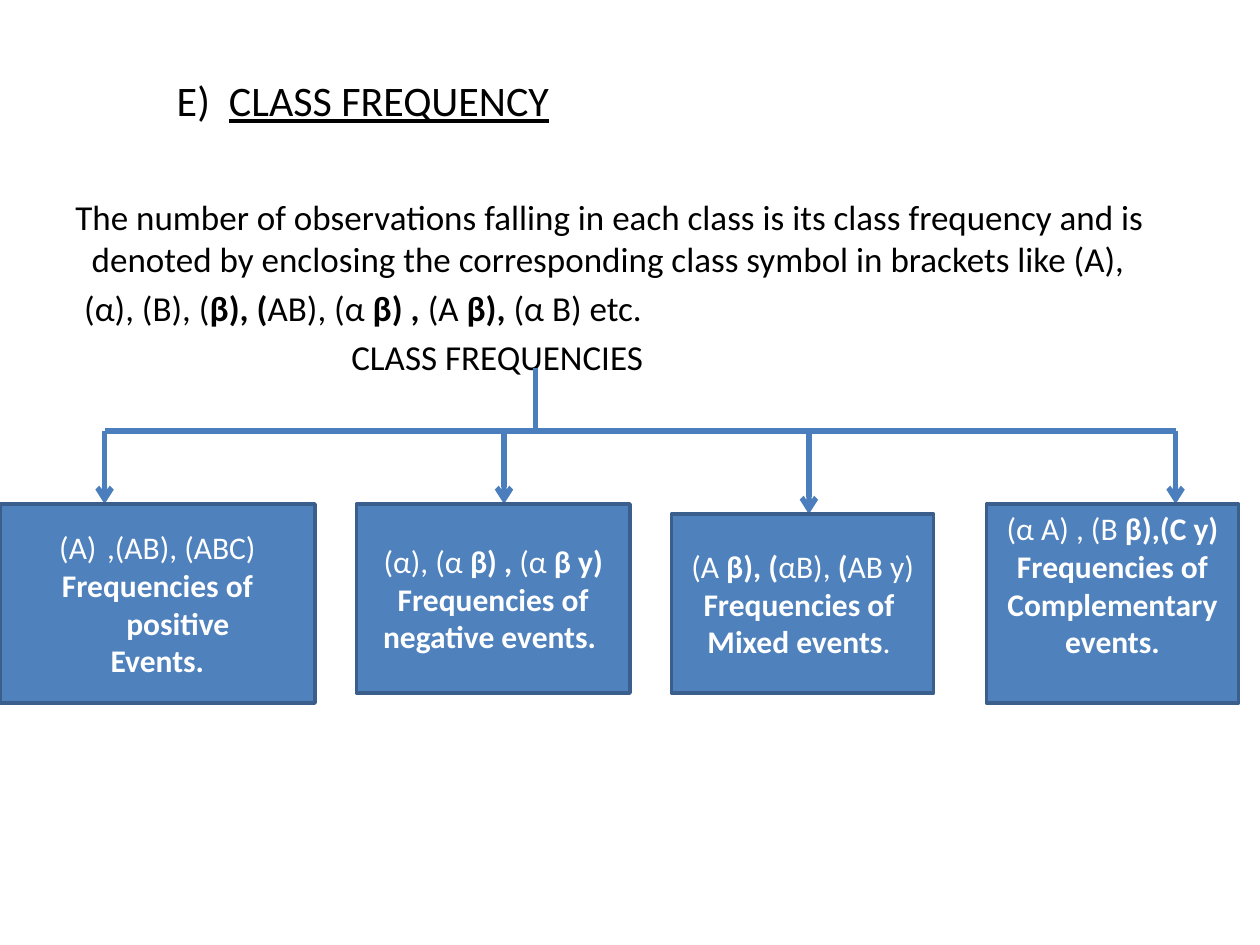
from lxml.etree import SubElement
from pptx import Presentation
from pptx.dml.color import RGBColor
from pptx.enum.shapes import MSO_CONNECTOR, MSO_SHAPE
from pptx.enum.text import MSO_ANCHOR, PP_ALIGN
from pptx.oxml.ns import qn
from pptx.util import Inches, Pt

# Content: asterisks switch bold on and off
TITLE = [("E)  ", False), ("CLASS FREQUENCY", True)]  # text, underlined
BODY = [  # text, left margin, first-line indent
    ("The number of observations falling in each class is its class frequency and is "
     "denoted by enclosing the corresponding class symbol in brackets like (A),", 0.38, -0.13),
    ("(α), (B), (*β), (*AB), (α* β) , *(A* β), *(α B) etc.", 0.32, 0),
    ("CLASS FREQUENCIES", 2.44, 0),
]
CLASSES = [
    {"box": (0, 4, 2.5, 1.58), "arrow": 0.83, "hanging": 0.38, "numbered": True,
     "lines": [",(AB), (ABC)", "*Frequencies of positive ", "*Events."]},
    {"box": (2.83, 4, 2.17, 1.5), "arrow": 4,
     "lines": [" (α), (α* β) ,* (α* β y) ", "*Frequencies of negative events. "]},
    {"box": (5.33, 4.08, 2.08, 1.42), "arrow": 6.42,
     "lines": ["(A* β), (*αB),* (*AB y)", "*Frequencies of ", "*Mixed events*. "]},
    {"box": (7.83, 4, 2, 1.58), "arrow": 9.33, "bottom": 0.35,
     "lines": ["(α A) , (B *β),(C y)", "*Frequencies of", "*Complementary events."]},
]
COLORS = {"text": "000000", "box": "4F81BD", "edge": "3A5F8C",
          "line": "4B7EBC", "box text": "FFFFFF"}
FONT = "Calibri"
STEM_X, STEM_TOP, BAR_Y = 4.25, 2.92, 3.42


def color(name):
    return RGBColor.from_string(COLORS[name])


def add_run(paragraph, text, size, ink, **style):
    run = paragraph.add_run()
    run.text = text
    run.font.color.rgb = color(ink)
    for name, value in {"name": FONT, "size": Pt(size), **style}.items():
        setattr(run.font, name, value)


def add_marked(paragraph, marked, size, ink):
    for i, part in enumerate(marked.split("*")):
        if part:
            add_run(paragraph, part, size, ink, bold=i % 2 == 1)


def indent(paragraph, left, first):
    properties = paragraph._p.get_or_add_pPr()
    properties.set("marL", str(Inches(left)))
    properties.set("indent", str(Inches(first)))
    return properties


def paragraphs(frame, count):
    return [frame.paragraphs[0]] + [frame.add_paragraph() for _ in range(count - 1)]


def add_line(slide, x1, y1, x2, y2, arrow=False):
    line = slide.shapes.add_connector(
        MSO_CONNECTOR.STRAIGHT, *map(Inches, (x1, y1, x2, y2)))
    line.line.color.rgb = color("line")
    line.line.width = Pt(3)
    if arrow:
        SubElement(line.line._get_or_add_ln(), qn("a:tailEnd"), type="arrow")
    SubElement(line._element.spPr, qn("a:effectLst"))


def add_class(slide, item):
    add_line(slide, item["arrow"], BAR_Y, item["arrow"], item["box"][1], arrow=True)
    box = slide.shapes.add_shape(
        MSO_SHAPE.FLOWCHART_PROCESS, *map(Inches, item["box"]))
    box.shadow.inherit = False
    box.fill.solid()
    box.fill.fore_color.rgb = color("box")
    box.line.color.rgb = color("edge")
    box.line.width = Pt(2)
    frame = box.text_frame
    frame.word_wrap = True
    frame.vertical_anchor = MSO_ANCHOR.MIDDLE
    frame.margin_bottom = Inches(item.get("bottom", 0.05))
    hanging = item.get("hanging", 0)
    lines = item["lines"]
    for i, (paragraph, text) in enumerate(zip(paragraphs(frame, len(lines)), lines)):
        paragraph.alignment = PP_ALIGN.CENTER
        properties = indent(paragraph, hanging, -hanging)
        if i == 0 and item.get("numbered"):
            SubElement(properties, qn("a:buFont"), typeface="+mj-lt")
            SubElement(properties, qn("a:buAutoNum"), type="alphaUcParenBoth")
        add_marked(paragraph, text, 18, "box text")


def main():
    deck = Presentation()
    deck.slide_width, deck.slide_height = Inches(10), Inches(7.5)
    slide = deck.slides.add_slide(deck.slide_layouts[6])

    # Title
    title = slide.shapes.add_textbox(*map(Inches, (0.42, 0.33, 4.92, 0.92))).text_frame
    title.word_wrap = True
    title.vertical_anchor = MSO_ANCHOR.MIDDLE
    title.paragraphs[0].alignment = PP_ALIGN.CENTER
    for text, underlined in TITLE:
        add_run(title.paragraphs[0], text, 24, "text", underline=underlined)

    # Definition and heading of the tree
    body = slide.shapes.add_textbox(*map(Inches, (0.25, 1.5, 9.5, 5.2))).text_frame
    body.word_wrap = True
    for paragraph, (text, left, first) in zip(paragraphs(body, len(BODY)), BODY):
        indent(paragraph, left, first)
        paragraph.space_before = Pt(4)
        add_marked(paragraph, text, 20, "text")

    # Tree: stem, crossbar, then one arrow and box per class
    add_line(slide, STEM_X, STEM_TOP, STEM_X, BAR_Y)
    add_line(slide, CLASSES[0]["arrow"], BAR_Y, CLASSES[-1]["arrow"], BAR_Y)
    for item in CLASSES:
        add_class(slide, item)

    deck.save("out.pptx")


if __name__ == "__main__":
    main()
